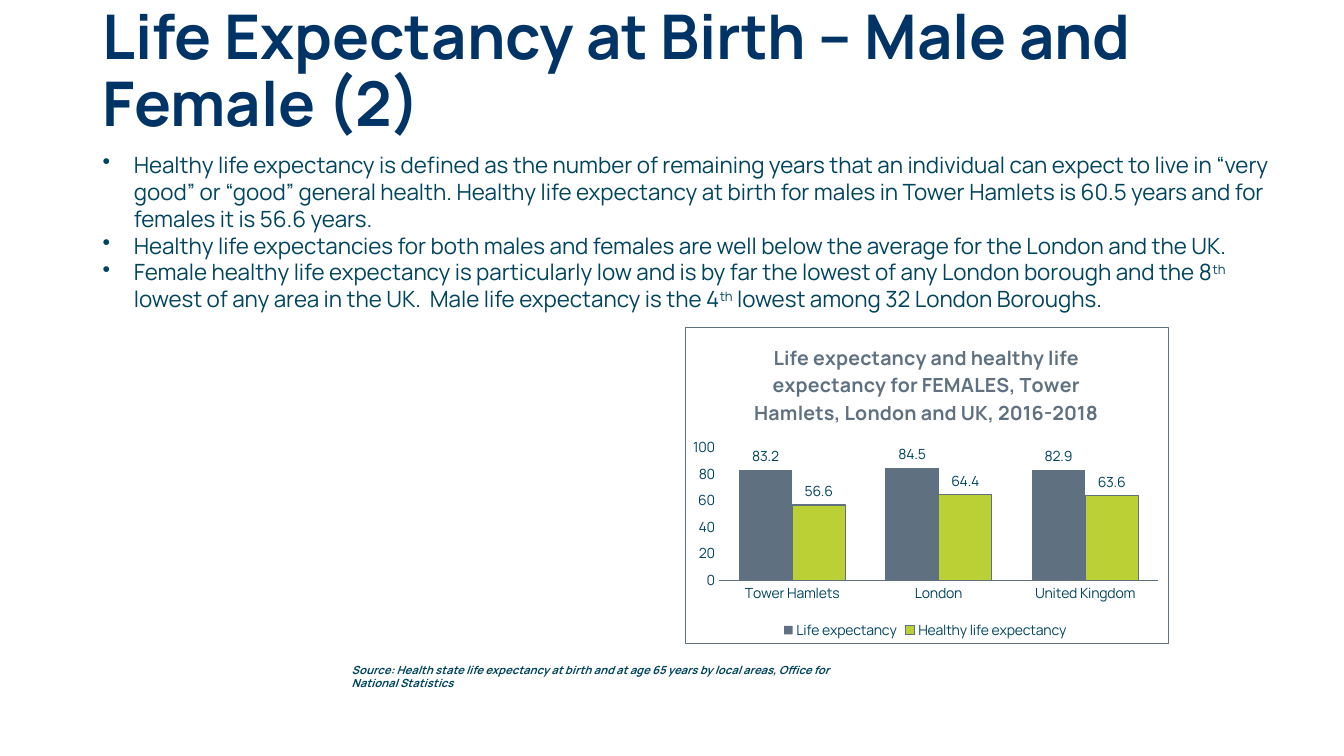
import pptx
import pptx.chart.data
import pptx.dml.color
import pptx.enum.chart
import pptx.enum.text
import pptx.oxml
import pptx.oxml.ns
import pptx.util
from pptx.util import Inches

FONT = "Manrope"
COLOURS = {
    "title": "003366",
    "body": "00445E",
    "slate": "5F7180",
    "lime": "BBD034",
    "white": "FFFFFF",
}
BULLETS = [
    [("Healthy life expectancy is defined as the number of remaining years that an individual "
      "can expect to live in “very good” or “good” general health. Healthy life expectancy at "
      "birth for males in Tower Hamlets is 60.5 years and for females it is 56.6 years.", False)],
    [("Healthy life expectancies for both males and females are well below the average for "
      "the London and the UK.", False)],
    [("Female healthy life expectancy is particularly low and is by far the lowest of any "
      "London borough and the 8", False),
     ("th", True),
     (" lowest of any area in the UK.  Male life expectancy is the 4", False),
     ("th", True),
     (" lowest among 32 London Boroughs.", False)],
]
CHART_TITLE = ("Life expectancy and healthy life expectancy for FEMALES, "
               "Tower Hamlets, London and UK, 2016-2018")
AREAS = ["Tower Hamlets", "London", "United Kingdom"]
SERIES = [
    ("Life expectancy", [83.2, 84.5, 82.9], "slate", False),
    ("Healthy life expectancy ", [56.6, 64.4, 63.6], "lime", True),
]
SOURCE = ("Source: Health state life expectancy at birth and at age 65 years by local areas, "
          "Office for National Statistics")


def rgb(name):
    return pptx.dml.color.RGBColor.from_string(COLOURS[name])


def style_font(font, size, colour, bold=False, italic=False):
    font.name = FONT
    font.size = pptx.util.Pt(size)
    font.bold = bold
    font.italic = italic
    font.color.rgb = rgb(colour)


def outline(line, colour):
    line.color.rgb = rgb(colour)
    line.width = pptx.util.Pt(0.75)


def add_bullet(para):
    properties = para._p.get_or_add_pPr()
    properties.set("marL", str(Inches(0.31)))
    properties.set("indent", str(-Inches(0.31)))
    bullet = pptx.oxml.parse_xml(
        f'<a:buChar {pptx.oxml.ns.nsdecls("a")} char="•"/>')
    properties.append(bullet)


def add_text(page, place, paragraphs, size, colour, bold=False, italic=False,
             bulleted=False, spacing=None, anchor=pptx.enum.text.MSO_ANCHOR.TOP):
    box = page.shapes.add_textbox(*[Inches(length) for length in place])
    frame = box.text_frame
    frame.word_wrap = True
    frame.vertical_anchor = anchor
    for number, pieces in enumerate(paragraphs):
        para = frame.add_paragraph() if number else frame.paragraphs[0]
        if bulleted:
            add_bullet(para)
        if spacing:
            para.line_spacing = spacing
        for words, raised in pieces:
            span = para.add_run()
            span.text = words
            style_font(span.font, size, colour, bold, italic)
            if raised:
                span.font._element.set("baseline", "30000")


def area_style(border=None):
    line = (f'<a:ln w="9525"><a:solidFill><a:srgbClr val="{border}"/></a:solidFill></a:ln>'
            if border else '<a:ln><a:noFill/></a:ln>')
    return pptx.oxml.parse_xml(
        f'<c:spPr {pptx.oxml.ns.nsdecls("c", "a")}><a:solidFill>'
        f'<a:srgbClr val="{COLOURS["white"]}"/></a:solidFill>{line}</c:spPr>')


def place_plot(plot_area, left, top, width, height):
    for layout in plot_area.findall(pptx.oxml.ns.qn("c:layout")):
        plot_area.remove(layout)
    plot_area.insert(0, pptx.oxml.parse_xml(
        f'<c:layout {pptx.oxml.ns.nsdecls("c")}><c:manualLayout>'
        '<c:layoutTarget val="inner"/><c:xMode val="edge"/><c:yMode val="edge"/>'
        f'<c:x val="{left}"/><c:y val="{top}"/><c:w val="{width}"/><c:h val="{height}"/>'
        '</c:manualLayout></c:layout>'))


def style_axes(chart):
    ticks = pptx.enum.chart.XL_TICK_MARK.NONE
    for axis in (chart.category_axis, chart.value_axis):
        axis.major_tick_mark = ticks
        axis.minor_tick_mark = ticks
        axis.has_major_gridlines = False
    outline(chart.category_axis.format.line, "slate")
    scale = chart.value_axis
    scale.minimum_scale = 0
    scale.maximum_scale = 100
    scale.major_unit = 20
    scale.format.line.fill.background()


def style_series(series, colour, bordered):
    series.invert_if_negative = False
    series.format.fill.solid()
    series.format.fill.fore_color.rgb = rgb(colour)
    if bordered:
        outline(series.format.line, "slate")
    labels = series.data_labels
    labels.show_value = True
    labels.position = pptx.enum.chart.XL_LABEL_POSITION.OUTSIDE_END
    style_font(labels.font, 10, "body")


def add_column_chart(page, place):
    data = pptx.chart.data.CategoryChartData()
    data.categories = AREAS
    for name, values, _, _ in SERIES:
        data.add_series(name, values)
    chart = page.shapes.add_chart(
        pptx.enum.chart.XL_CHART_TYPE.COLUMN_CLUSTERED,
        *[Inches(length) for length in place], data).chart
    style_font(chart.font, 10, "body")
    chart.has_title = True
    span = chart.chart_title.text_frame.paragraphs[0].add_run()
    span.text = CHART_TITLE
    style_font(span.font, 14, "slate", bold=True)
    chart.chart_title.include_in_layout = False
    chart.has_legend = True
    chart.legend.position = pptx.enum.chart.XL_LEGEND_POSITION.BOTTOM
    chart.legend.include_in_layout = False
    style_axes(chart)
    plot = chart.plots[0]
    plot.gap_width = 75
    plot.overlap = 0
    plot.vary_by_categories = False
    for series, (_, _, colour, bordered) in zip(plot.series, SERIES):
        style_series(series, colour, bordered)
    body = chart._chartSpace.find(pptx.oxml.ns.qn("c:chart"))
    body.addnext(area_style(COLOURS["slate"]))
    plot_area = body.find(pptx.oxml.ns.qn("c:plotArea"))
    plot_area.append(area_style())
    place_plot(plot_area, 0.07, 0.38, 0.91, 0.42)


def main():
    deck = pptx.Presentation()
    deck.slide_width = Inches(13.33)
    deck.slide_height = Inches(7.5)
    page = deck.slides.add_slide(deck.slide_layouts[6])
    add_text(page, (0.92, 0, 10.68, 1.45),
             [[("Life Expectancy at Birth – Male and Female (2)", False)]],
             44, "title", bold=True, spacing=0.9,
             anchor=pptx.enum.text.MSO_ANCHOR.MIDDLE)
    add_text(page, (0.92, 1.45, 11.81, 1.72), BULLETS, 16, "body", bulleted=True)
    add_column_chart(page, (6.79, 3.24, 4.8, 3.15))
    add_text(page, (3.39, 6.53, 5.08, 0.37), [[(SOURCE, False)]], 8, "body",
             bold=True, italic=True)
    deck.save("out.pptx")


if __name__ == "__main__":
    main()
